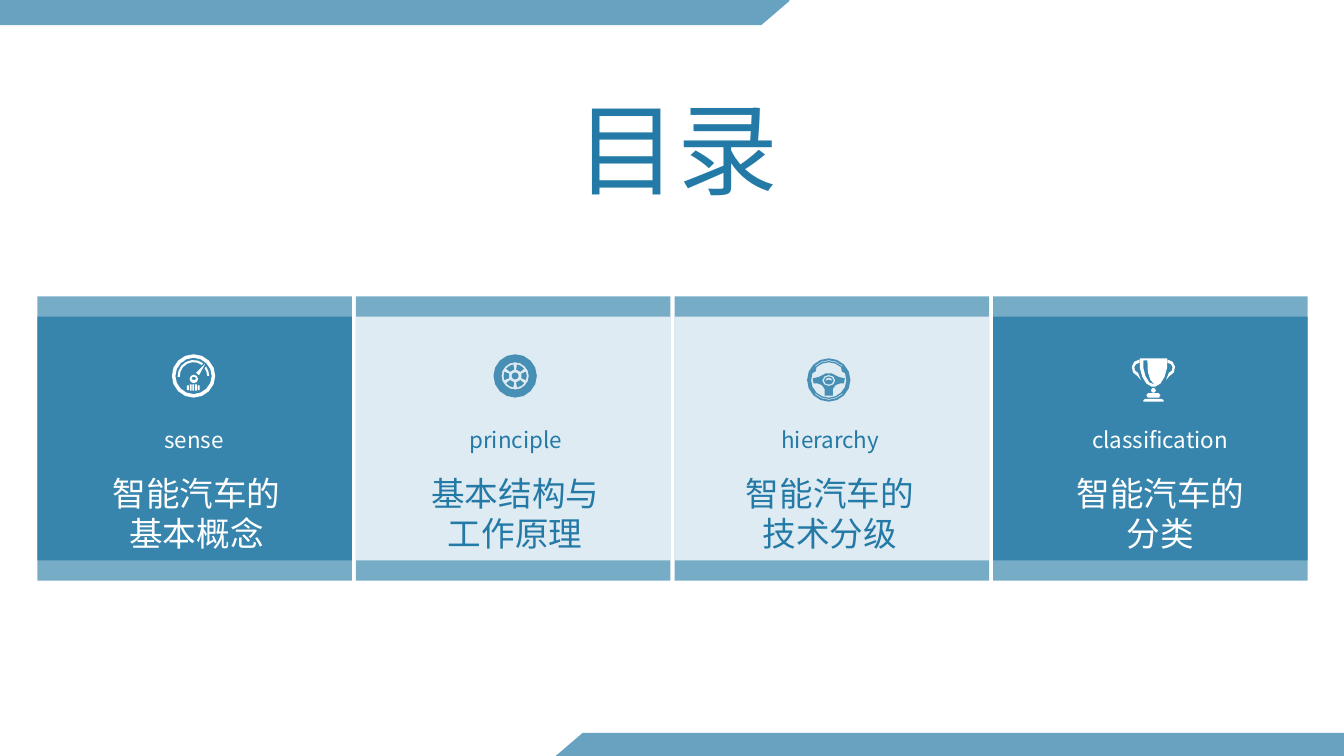
from math import ceil, cos, radians, sin

from pptx import Presentation
from pptx.dml.color import RGBColor
from pptx.enum.shapes import MSO_SHAPE
from pptx.enum.text import MSO_AUTO_SIZE, PP_ALIGN
from pptx.oxml.ns import qn
from pptx.util import Inches, Pt
from lxml import etree

RECTANGLE = MSO_SHAPE.RECTANGLE
CENTER = PP_ALIGN.CENTER
GROW = MSO_AUTO_SIZE.SHAPE_TO_FIT_TEXT
BLUE, WHITE = "247AA6", "FFFFFF"
LATIN_FONT, HEADING_FONT = "Noto Sans CJK JP", "Noto Sans CJK SC"

SLIDE_WIDTH, SLIDE_HEIGHT = 13.33, 7.5
CARD_LEFT, CARD_WIDTH, CARD_PITCH = 0.37, 3.12, 3.16
FRAME_TOP, FRAME_HEIGHT = 2.94, 2.82
PANEL_TOP, PANEL_HEIGHT = 3.14, 2.42
LABEL_WIDTH = 2.03

# label, its left, heading lines, their left and width,
# icon name, icon centre, panel colour, ink, icon opacity
CARDS = [
    ("sense", 0.91, ["智能汽车的", "基本概念"], 0.6, 2.7,
     "gauge", (1.92, 3.73), BLUE, WHITE, 100),
    ("principle", 4.1, ["基本结构与", "工作原理"], 3.85, 2.52,
     "tyre", (5.11, 3.73), WHITE, BLUE, 81),
    ("hierarchy", 7.22, ["智能汽车的", "技术分级"], 6.97, 2.52,
     "wheel", (8.22, 3.77), WHITE, BLUE, 81),
    ("classification", 10.49, ["智能汽车的", "分类"], 10.25, 2.52,
     "trophy", (11.44, 3.77), BLUE, WHITE, 100),
]
BAND = [(0, 0), (7.83, 0), (7.83, 0.01), (7.55, 0.25), (0, 0.25)]


# Icon outlines are in hundredths of an inch around the icon's centre.
def arc(radius, start, stop, center=(0, 0), squash=1):
    """Points along an arc; degrees run clockwise from the right."""
    steps = ceil(abs(stop - start) / (45 if radius < 9 else 22.5))
    angles = [radians(start + (stop - start) * i / steps) for i in range(steps + 1)]
    return [(center[0] + radius * cos(a), center[1] + radius * squash * sin(a))
            for a in angles]


def circle(radius, center=(0, 0), squash=1):
    return arc(radius, 0, 360, center, squash)[:-1]


def sector(inner, outer, start, stop):
    return arc(outer, start, stop) + arc(inner, stop, start)


def block(left, top, right, bottom):
    return [(left, top), (right, top), (right, bottom), (left, bottom)]


def flip(points):
    return [(-x, y) for x, y in points]


def symmetric(half):
    """Close a right-hand half outline with its reflection."""
    return half + flip(half[::-1])


HANDLE = arc(7.5, -90, 75, (14, -12), 1.1) + [(12.5, 0)] + arc(5, 75, -90, (14, -12))
GRIP = [(13, -8.5), (16.5, -6.5)]
SPOKES = [(3, -6.5), (10, -3), (16, -1.5), (15, 3.5), (11, 3.5), (7, 5),
          (4, 9), (4, 15.5)]
BOWL = [(13.5, -21.5), (13.5, -12), (11, -3), (7, 3.5), (2, 6.5)]
SHINE = [(-6, -19.5), (-10, -19.5), (-10, -12), (-8, -4), (-4, 2.5), (1, 4.5),
         (-3, 0), (-5.5, -8)]

ICONS = {
    "gauge": [circle(21.5), circle(18), sector(13.5, 15.5, -36, 0),
              sector(13.7, 15.8, -184, -53),
              [(2.5, -3), (11.5, -12), (5.5, -0.7)],
              circle(4.2, (0.3, 3)), circle(2.3, (0.3, 2.5), 0.7),
              block(-6.5, 9.5, -4.5, 14)]
             + [block(x, 8.5, x + 1.7, 14.5) for x in (-3.7, -1.1, 1.5)]
             + [block(4.1, 9.5, 6.1, 14)],
    "tyre": [circle(21.5), circle(13.5), circle(3.5)]
            + [sector(6.5, 11.5, angle - 21, angle + 21) for angle in range(0, 360, 60)],
    "wheel": [circle(21.5), sector(18.8, 19.6, -135, -45), sector(18.8, 19.6, 45, 135),
              arc(17.5, -134, -46) + GRIP + arc(17.5, -21, 201) + flip(GRIP[::-1]),
              symmetric(SPOKES), circle(6.5, (0, 0.5), 0.85), circle(4.8, (0, 0.5), 0.85),
              arc(3.5, 180, 360, (0, 0.8), 0.9) + [(0, -0.3)]],
    "trophy": [symmetric(BOWL), SHINE, HANDLE, flip(HANDLE), circle(2.4, (0, 10.3)),
               symmetric([(5, 13), (7, 15), (5.5, 17.5)]),
               symmetric([(8, 18.7), (10, 20), (10, 21.5)])],
}


def paint(shape, color, opacity):
    shape.shadow.inherit = False
    shape.line.fill.background()
    shape.fill.solid()
    shape.fill.fore_color.rgb = RGBColor.from_string(color)
    if opacity < 100:
        tint = shape.fill._xPr.find(qn("a:solidFill"))[0]
        etree.SubElement(tint, qn("a:alpha"), val=str(opacity * 1000))


def add_panel(page, column, top, height, color, opacity):
    left = CARD_LEFT + column * CARD_PITCH
    shape = page.shapes.add_shape(RECTANGLE, Inches(left), Inches(top),
                                  Inches(CARD_WIDTH), Inches(height))
    paint(shape, color, opacity)


def add_outline(page, contours, color, opacity):
    """Draw contours, given in inches, as one shape; inner contours cut holes."""
    contours = [[(round(x * 1000), round(y * 1000)) for x, y in points]
                for points in contours]
    builder = page.shapes.build_freeform(*contours[0][0], scale=914.4)
    for index, points in enumerate(contours):
        if index:
            builder.move_to(*points[0])
        builder.add_line_segments(points[1:], close=True)
    paint(builder.convert_to_shape(), color, opacity)


def add_text(page, lines, left, top, width, height, size, font, color):
    box = page.shapes.add_textbox(Inches(left), Inches(top),
                                  Inches(width), Inches(height))
    frame = box.text_frame
    frame.word_wrap = True
    frame.auto_size = GROW
    frame.text = "\n".join(lines)
    for para in frame.paragraphs:
        para.alignment = CENTER
        para.font.size = Pt(size)
        para.font.color.rgb = RGBColor.from_string(color)
        para.font.name = font
        etree.SubElement(para.font._rPr, qn("a:ea"), typeface=font)


def main():
    deck = Presentation()
    deck.slide_width, deck.slide_height = Inches(SLIDE_WIDTH), Inches(SLIDE_HEIGHT)
    page = deck.slides.add_slide(deck.slide_layouts[6])

    for column in range(len(CARDS)):
        add_panel(page, column, FRAME_TOP, FRAME_HEIGHT, BLUE, 62)
    add_text(page, ["目录"], 5.12, 0.81, 3.2, 1.31, 72, LATIN_FONT, BLUE)

    for column, card in enumerate(CARDS):
        (label, label_left, heading, heading_left, heading_width,
         icon, (icon_x, icon_y), panel, ink, opacity) = card
        add_panel(page, column, PANEL_TOP, PANEL_HEIGHT, panel, 77)
        contours = [[(icon_x + x / 100, icon_y + y / 100) for x, y in points]
                    for points in ICONS[icon]]
        add_outline(page, contours, ink, opacity)
        add_text(page, [label], label_left, 4.18, LABEL_WIDTH, 0.37, 16, LATIN_FONT, ink)
        add_text(page, heading, heading_left, 4.64, heading_width, 0.91, 24,
                 HEADING_FONT, ink)

    add_outline(page, [BAND], BLUE, 69)
    add_outline(page, [[(SLIDE_WIDTH - x, SLIDE_HEIGHT + 0.02 - y) for x, y in BAND]],
                BLUE, 69)
    deck.save("out.pptx")


if __name__ == "__main__":
    main()
